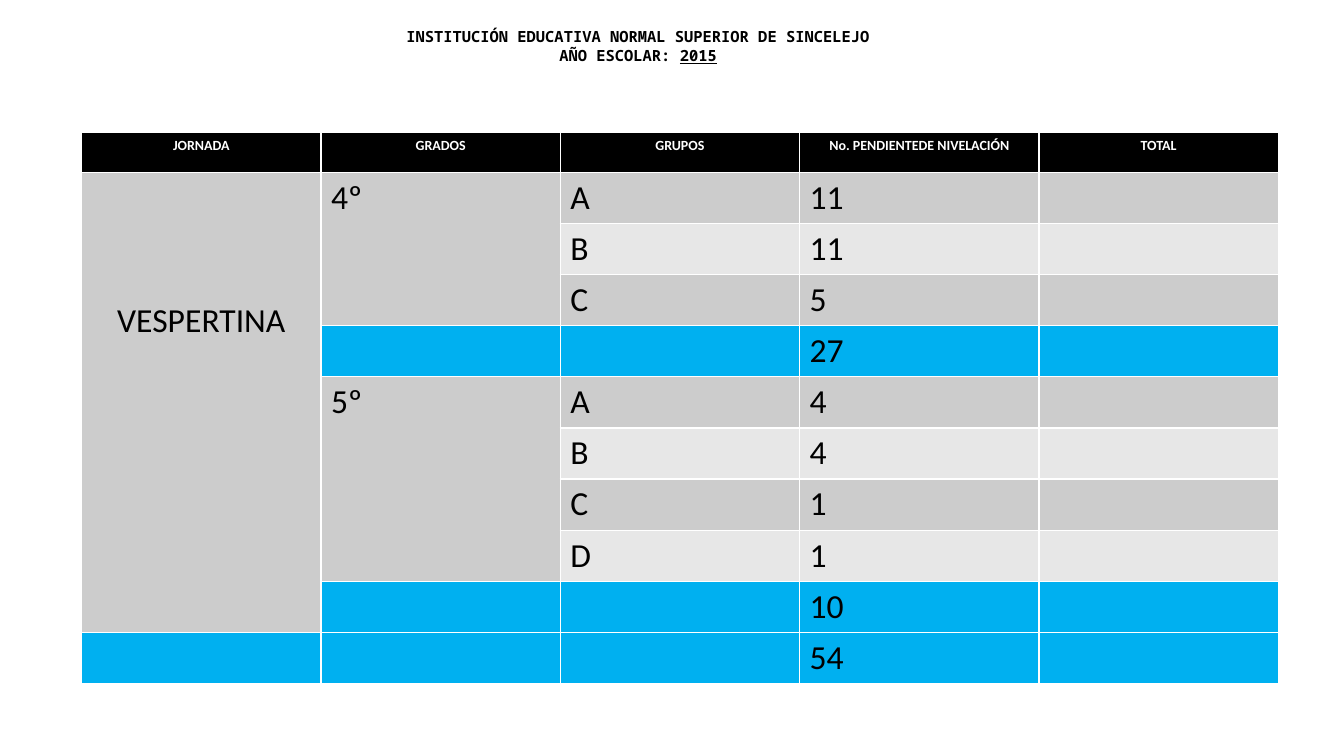
from dataclasses import dataclass

from pptx import Presentation
from pptx.dml.color import RGBColor
from pptx.enum.text import MSO_ANCHOR, MSO_AUTO_SIZE, PP_ALIGN
from pptx.util import Inches, Pt


@dataclass(frozen=True)
class Theme:
    black: str = "000000"
    white: str = "FFFFFF"
    dark_band: str = "CCCCCC"
    light_band: str = "E7E7E7"
    subtotal: str = "00B0F0"
    title_font: str = "Noto Sans Mono"
    table_font: str = "Calibri"
    title_size: int = 11
    header_size: int = 10
    body_size: int = 24


THEME = Theme()
HEADERS = ["JORNADA", "GRADOS", "GRUPOS", "No. PENDIENTEDE NIVELACIÓN", "TOTAL"]
SHIFT = "VESPERTINA"
GRADES = [
    ("4º", [("A", "11"), ("B", "11"), ("C", "5")], "27"),
    ("5º", [("A", "4"), ("B", "4"), ("C", "1"), ("D", "1")], "10"),
]
GRAND_TOTAL = "54"
HEADER_HEIGHT = 0.4
SHIFT_OFFSET = 1.27


def add_run(para, text, font, size, color, bold=False, underline=None):
    run = para.add_run()
    run.text = text
    run.font.name = font
    run.font.size = Pt(size)
    run.font.color.rgb = RGBColor.from_string(color)
    run.font.bold = bold
    run.font.underline = underline


def add_heading(page, left, top, width, height):
    title = page.shapes.title
    title.left, title.top = Inches(left), Inches(top)
    title.width, title.height = Inches(width), Inches(height)
    frame = title.text_frame
    frame.word_wrap = True
    frame.auto_size = MSO_AUTO_SIZE.NONE
    frame.vertical_anchor = MSO_ANCHOR.MIDDLE
    lines = [
        [("INSTITUCIÓN EDUCATIVA NORMAL SUPERIOR DE SINCELEJO", None)],
        [("AÑO ESCOLAR: ", None), ("2015", True)],
    ]
    for index, line in enumerate(lines):
        para = frame.add_paragraph() if index else frame.paragraphs[0]
        para.alignment = PP_ALIGN.CENTER
        para.space_before = Pt(0)
        for text, underline in line:
            add_run(para, text, THEME.title_font, THEME.title_size,
                    THEME.black, True, underline)


def fill_cell(cell, color):
    cell.fill.solid()
    cell.fill.fore_color.rgb = RGBColor.from_string(color)


def write_cell(cell, text, size=THEME.body_size, color=THEME.black,
               bold=False, align=PP_ALIGN.LEFT):
    para = cell.text_frame.paragraphs[0]
    para.alignment = align
    add_run(para, text, THEME.table_font, size, color, bold)


def fill_row(table, row, color):
    for column in range(len(HEADERS)):
        fill_cell(table.cell(row, column), color)


def add_grade(table, first, grade, groups, subtotal):
    last = first + len(groups)
    for offset, (group, pending) in enumerate(groups):
        row = first + offset
        fill_row(table, row, THEME.light_band if offset % 2 else THEME.dark_band)
        write_cell(table.cell(row, 2), group)
        write_cell(table.cell(row, 3), pending)
    table.cell(first, 1).merge(table.cell(last - 1, 1))
    write_cell(table.cell(first, 1), grade)
    fill_row(table, last, THEME.subtotal)
    write_cell(table.cell(last, 3), subtotal)
    return last + 1


def add_levelling_table(page, left, top, width, height):
    row_count = 2 + sum(len(groups) + 1 for _, groups, _ in GRADES)
    table = page.shapes.add_table(
        row_count, len(HEADERS), Inches(left), Inches(top),
        Inches(width), Inches(height)).table
    table.horz_banding = False
    for column in table.columns:
        column.width = Inches(width / len(HEADERS))
    for index, row in enumerate(table.rows):
        row.height = Inches((height - HEADER_HEIGHT) / (row_count - 1)
                            if index else HEADER_HEIGHT)

    fill_row(table, 0, THEME.black)
    for column, text in enumerate(HEADERS):
        write_cell(table.cell(0, column), text, THEME.header_size,
                   THEME.white, True, PP_ALIGN.CENTER)

    next_row = 1
    for grade, groups, subtotal in GRADES:
        next_row = add_grade(table, next_row, grade, groups, subtotal)

    shift = table.cell(1, 0)
    shift.merge(table.cell(next_row - 1, 0))
    shift.margin_top = Inches(SHIFT_OFFSET)
    write_cell(shift, SHIFT, align=PP_ALIGN.CENTER)
    fill_row(table, next_row, THEME.subtotal)
    write_cell(table.cell(next_row, 3), GRAND_TOTAL)


def main():
    deck = Presentation()
    deck.slide_width, deck.slide_height = Inches(13.33), Inches(7.5)
    page = deck.slides.add_slide(deck.slide_layouts[5])
    add_heading(page, 2.08, 0.22, 8.5, 0.47)
    add_levelling_table(page, 0.81, 1.31, 11.87, 5.47)
    deck.save("out.pptx")


if __name__ == "__main__":
    main()
